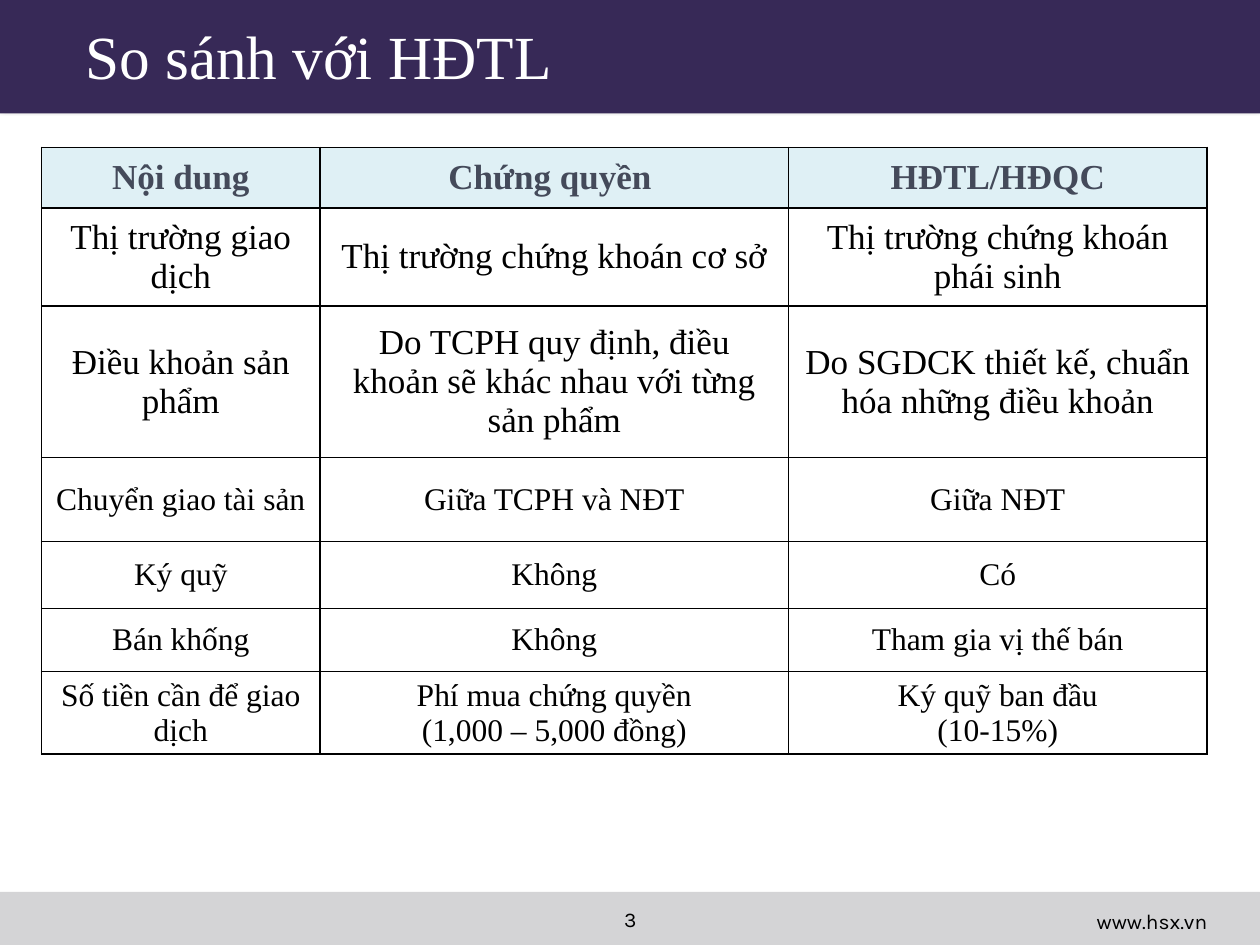
from lxml.etree import SubElement
from pptx import Presentation
from pptx.dml.color import RGBColor
from pptx.enum.shapes import MSO_SHAPE as Preset
from pptx.enum.text import MSO_ANCHOR as Anchor, PP_ALIGN as Align
from pptx.oxml.ns import qn
from pptx.util import Cm, Pt

WIDTH, HEIGHT = 25.4, 19.05
SERIF, SANS = "Times New Roman", "Karla"
BLACK, WHITE = "000000", "FFFFFF"

# (left, top, width, height) in cm, fill
HEADER_BAND = ((0, 0, WIDTH, 2.29), "372957")
FOOTER_BAND = ((0, 17.98, WIDTH, 1.07), "D4D4D6")

FOOTER_FONT = {"size": 12, "name": SANS, "color": BLACK}
# text, box in cm, alignment, anchor, font
TEXTS = [
    ("So sánh với HĐTL", (1.47, 0.33, 22.86, 1.57), Align.LEFT, Anchor.MIDDLE,
     {"size": 35, "name": SERIF, "color": WHITE}),
    ("3", (10.59, 18.16, 4.24, 0.89), Align.CENTER, Anchor.TOP, FOOTER_FONT),
    ("www.hsx.vn", (18.67, 18.19, 5.92, 0.86), Align.RIGHT, Anchor.TOP, FOOTER_FONT),
]

TABLE_LEFT, TABLE_TOP = 0.84, 2.97
COLUMN_WIDTHS = [5.61, 9.45, 8.43]
HEAD_FILL = "DFF0F5"
HEAD_FONT = {"size": 20, "name": SERIF, "color": "444A5A", "bold": True}
LARGE_FONT = {"size": 20, "name": SERIF, "color": BLACK, "bold": False}
SMALL_FONT = {**LARGE_FONT, "size": 18}
# height in cm, font, cell texts
ROWS = [
    (1.22, HEAD_FONT, ("Nội dung", "Chứng quyền ", "HĐTL/HĐQC")),
    (1.98, LARGE_FONT, ("Thị trường giao dịch", "Thị trường chứng khoán cơ sở",
                        "Thị trường chứng khoán phái sinh")),
    (3.05, LARGE_FONT, ("Điều khoản sản phẩm",
                        "Do TCPH quy định, điều khoản sẽ khác nhau với từng sản phẩm",
                        "Do SGDCK thiết kế, chuẩn hóa những điều khoản")),
    (1.7, SMALL_FONT, ("Chuyển giao tài sản", "Giữa TCPH và NĐT", "Giữa NĐT")),
    (1.35, SMALL_FONT, ("Ký quỹ", "Không", "Có")),
    (1.27, SMALL_FONT, ("Bán khống", "Không", "Tham gia vị thế bán")),
    (1.65, SMALL_FONT, ("Số tiền cần để giao dịch",
                        "Phí mua chứng quyền\n(1,000 – 5,000 đồng)",
                        "Ký quỹ ban đầu\n(10-15%)")),
]


def rgb(value):
    return RGBColor.from_string(value)


def write(frame, text, alignment, font):
    """Fill a text frame, one paragraph per line of text."""
    frame.text = text
    for paragraph in frame.paragraphs:
        paragraph.alignment = alignment
        for run in paragraph.runs:
            for key, value in font.items():
                if key == "color":
                    run.font.color.rgb = rgb(value)
                else:
                    setattr(run.font, key, Pt(value) if key == "size" else value)


def add_band(slide, box, fill):
    shape = slide.shapes.add_shape(Preset.RECTANGLE, *map(Cm, box))
    shape.shadow.inherit = False
    shape.fill.solid()
    shape.fill.fore_color.rgb = rgb(fill)
    shape.line.fill.background()
    return shape


def add_upward_shadow(shape):
    effects = shape._element.spPr.find(qn("a:effectLst"))
    shadow = SubElement(effects, qn("a:outerShdw"), blurRad=str(Pt(4)),
                        dist=str(Pt(3)), dir="16200000", rotWithShape="0")
    color = SubElement(shadow, qn("a:srgbClr"), val=BLACK)
    SubElement(color, qn("a:alpha"), val="40000")


def add_borders(cell):
    """Draw the four sides; they must come before the cell's fill."""
    properties = cell._tc.get_or_add_tcPr()
    for side in ("lnL", "lnR", "lnT", "lnB"):
        line = SubElement(properties, qn(f"a:{side}"), w=str(Pt(1)))
        fill = SubElement(line, qn("a:solidFill"))
        SubElement(fill, qn("a:srgbClr"), val=BLACK)


def add_comparison_table(slide):
    heights = [height for height, _, _ in ROWS]
    table = slide.shapes.add_table(
        len(ROWS), len(COLUMN_WIDTHS), Cm(TABLE_LEFT), Cm(TABLE_TOP),
        Cm(sum(COLUMN_WIDTHS)), Cm(sum(heights))).table
    table.horz_banding = False
    for column, width in zip(table.columns, COLUMN_WIDTHS):
        column.width = Cm(width)
    for row, (height, font, texts) in zip(table.rows, ROWS):
        row.height = Cm(height)
        for cell, text in zip(row.cells, texts):
            write(cell.text_frame, text, Align.CENTER, font)
            cell.vertical_anchor = Anchor.MIDDLE
            add_borders(cell)
            if font is HEAD_FONT:
                cell.fill.solid()
                cell.fill.fore_color.rgb = rgb(HEAD_FILL)
            else:
                cell.fill.background()


def main():
    presentation = Presentation()
    presentation.slide_width, presentation.slide_height = Cm(WIDTH), Cm(HEIGHT)
    slide = presentation.slides.add_slide(presentation.slide_layouts[6])
    add_upward_shadow(add_band(slide, *HEADER_BAND))
    add_band(slide, *FOOTER_BAND)
    add_comparison_table(slide)
    for text, box, alignment, anchor, font in TEXTS:
        frame = slide.shapes.add_textbox(*map(Cm, box)).text_frame
        frame.word_wrap = True
        frame.vertical_anchor = anchor
        write(frame, text, alignment, font)
    presentation.save("out.pptx")


if __name__ == "__main__":
    main()
